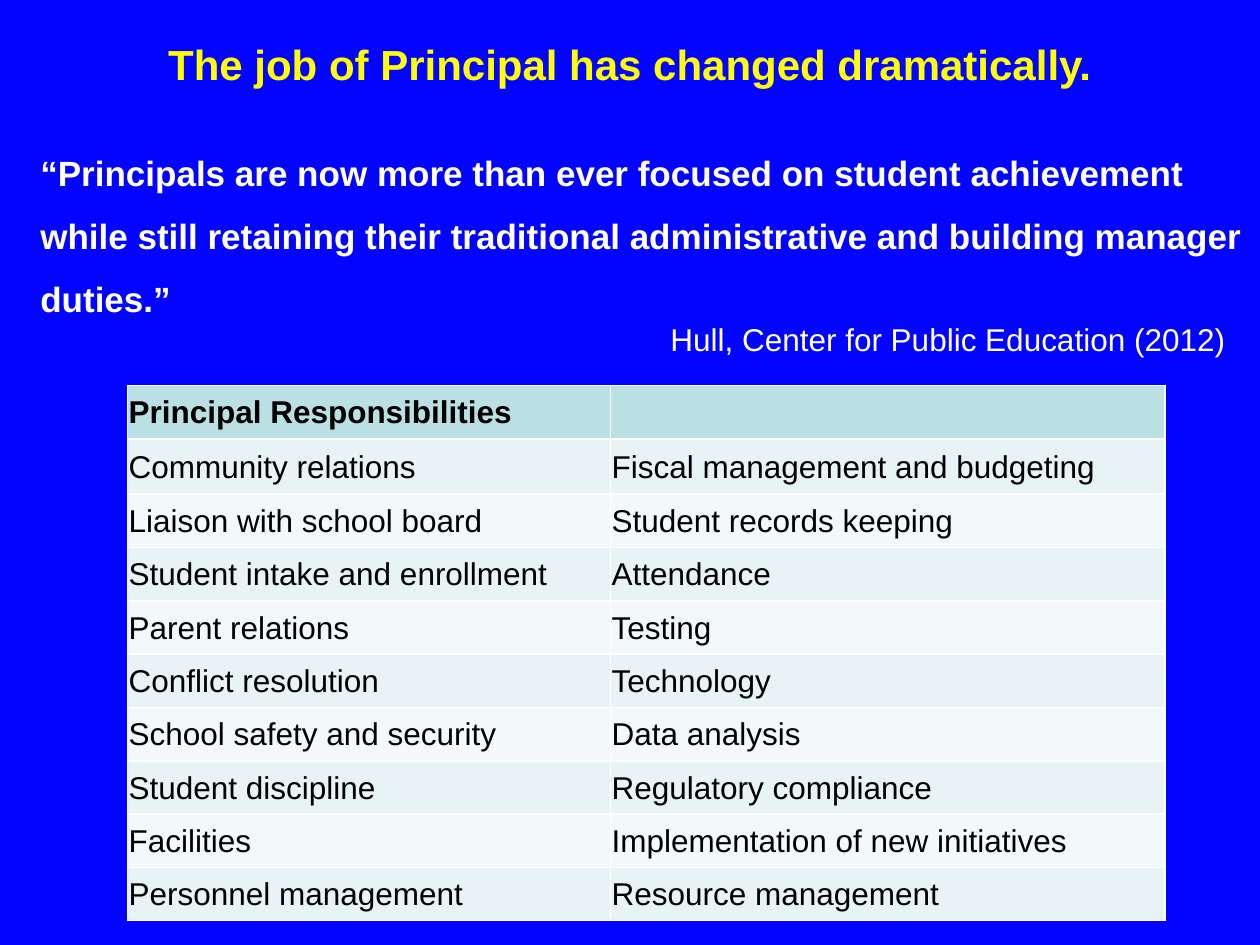
from lxml.etree import SubElement
from pptx import Presentation
from pptx.dml.color import RGBColor
from pptx.enum.text import MSO_ANCHOR as Anchor, PP_ALIGN as Align
from pptx.oxml.ns import qn
from pptx.util import Pt

# Content
TITLE = "The job of Principal has changed dramatically."
QUOTE = ("“Principals are now more than ever focused on student achievement "
         "while still retaining their traditional administrative and building "
         "manager duties.”")
CITATION = "Hull, Center for Public Education (2012)"
DUTIES = [
    ("Principal Responsibilities", ""),
    ("Community relations", "Fiscal management and budgeting"),
    ("Liaison with school board", "Student records keeping"),
    ("Student intake and enrollment", "Attendance"),
    ("Parent relations", "Testing"),
    ("Conflict resolution", "Technology"),
    ("School safety and security", "Data analysis"),
    ("Student discipline", "Regulatory compliance"),
    ("Facilities", "Implementation of new initiatives"),
    ("Personnel management", "Resource management"),
]

# Format
FONT = "Arial"
BLUE = RGBColor(0x03, 0x04, 0xFF)
YELLOW = RGBColor(0xFF, 0xFF, 0x00)
WHITE = RGBColor(0xFF, 0xFF, 0xFF)
BLACK = RGBColor(0x00, 0x00, 0x00)
HEADER = RGBColor(0xBB, 0xE0, 0xE3)
BANDS = [RGBColor(0xF3, 0xF9, 0xFA), RGBColor(0xE7, 0xF3, 0xF4)]
COL_WIDTHS = [276, 316.8]
ROW_HEIGHT, FIRST_DUTY_HEIGHT = 30.5, 31.7


def write(p, text, size=18, color=WHITE, bold=False, align=Align.LEFT,
          spacing=None, indent=0):
    p.alignment = align
    if spacing:
        p.line_spacing = spacing
    if indent:
        p._p.get_or_add_pPr().set("marL", str(Pt(indent)))
    r = p.add_run()
    r.text = text
    f = r.font
    f.name, f.size, f.bold = FONT, Pt(size), bold
    f.color.rgb = color


def add_box(slide, left, top, width, height, anchor=Anchor.TOP):
    tf = slide.shapes.add_textbox(Pt(left), Pt(top), Pt(width), Pt(height)).text_frame
    tf.word_wrap = True
    tf.vertical_anchor = anchor
    return tf


def set_borders(cell, widths):
    tc_pr = cell._tc.get_or_add_tcPr()
    for i, (side, width) in enumerate(widths.items()):
        ln = SubElement(tc_pr, qn(f"a:ln{side}"), w=str(Pt(width)))
        fill = SubElement(ln, qn("a:solidFill"))
        SubElement(fill, qn("a:srgbClr"), val=str(WHITE))
        tc_pr.insert(i, ln)  # borders come before the fill


prs = Presentation()
prs.slide_width, prs.slide_height = Pt(720), Pt(540)
s = prs.slides.add_slide(prs.slide_layouts[6])
s.background.fill.solid()
s.background.fill.fore_color.rgb = BLUE

# Title
tf = add_box(s, 0, 12.5, 720, 48, Anchor.MIDDLE)
write(tf.paragraphs[0], TITLE, size=24, color=YELLOW, bold=True, align=Align.CENTER)

# Table of responsibilities
table = s.shapes.add_table(len(DUTIES), 2, Pt(72.8), Pt(220.2), Pt(sum(COL_WIDTHS)),
                           Pt(ROW_HEIGHT * len(DUTIES))).table
for col, width in zip(table.columns, COL_WIDTHS):
    col.width = Pt(width)
for i, duties in enumerate(DUTIES):
    table.rows[i].height = Pt(FIRST_DUTY_HEIGHT if i == 1 else ROW_HEIGHT)
    for j, text in enumerate(duties):
        cell = table.cell(i, j)
        cell.vertical_anchor = Anchor.MIDDLE
        cell.margin_left = cell.margin_right = cell.margin_top = Pt(0.75)
        cell.margin_bottom = 0
        cell.fill.solid()
        cell.fill.fore_color.rgb = BANDS[i % 2] if i else HEADER
        set_borders(cell, {"L": 1, "R": 1, "T": 1.5 if i == 1 else 1,
                           "B": 1.5 if i == 0 else 1})
        if text:
            write(cell.text_frame.paragraphs[0], text, color=BLACK, bold=i == 0)

# Quotation and its source
tf = add_box(s, 16, 71.3, 704, 140.4)
write(tf.paragraphs[0], QUOTE, size=20, bold=True, spacing=1.5)
write(tf.add_paragraph(), CITATION, indent=360)

prs.save("out.pptx")
